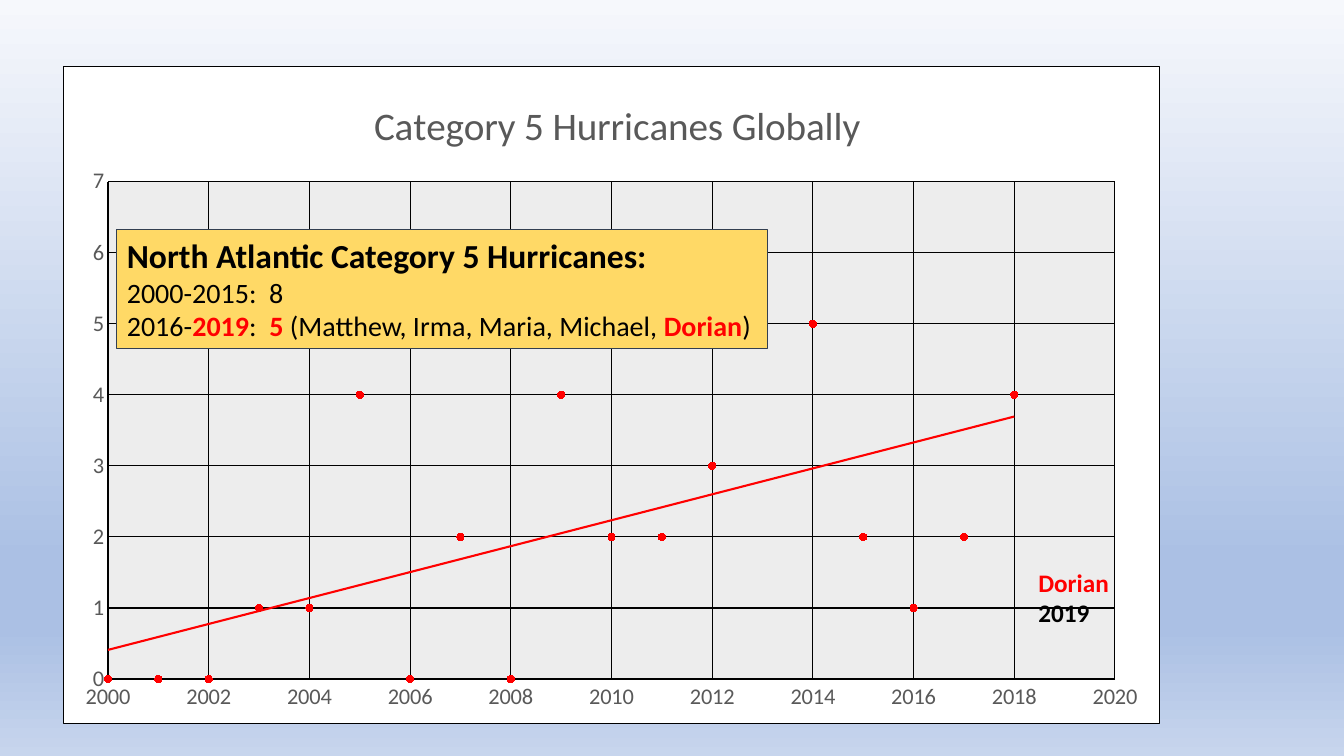
from dataclasses import dataclass

from lxml import etree
from pptx import Presentation
from pptx.chart.data import XyChartData
from pptx.dml.color import RGBColor
from pptx.enum.chart import XL_CHART_TYPE, XL_MARKER_STYLE, XL_TICK_MARK
from pptx.enum.shapes import MSO_SHAPE
from pptx.enum.text import MSO_ANCHOR, PP_ALIGN
from pptx.oxml import parse_xml
from pptx.oxml.ns import nsdecls, qn
from pptx.util import Inches, Pt

SCATTER = XL_CHART_TYPE.XY_SCATTER
CIRCLE = XL_MARKER_STYLE.CIRCLE
NO_TICK = XL_TICK_MARK.NONE
RECTANGLE = MSO_SHAPE.RECTANGLE
LEFT = PP_ALIGN.LEFT
TOP = MSO_ANCHOR.TOP


@dataclass(frozen=True)
class Theme:
    font: str = "Calibri"
    black: str = "000000"
    red: str = "FF0000"
    grey: str = "595959"
    white: str = "FFFFFF"
    plot: str = "EDEDED"
    callout: str = "FFD966"
    callout_line: str = "333F50"
    sky: tuple = ((0, "F6F8FC"), (74, "ABC0E4"), (83, "ABC0E4"), (100, "C7D5ED"))
    title_size: int = 28
    heading_size: int = 24
    body_size: int = 20
    label_size: int = 18
    axis_size: int = 16


THEME = Theme()
FIRST_YEAR = 2000
STORMS = (0, 0, 0, 1, 1, 4, 0, 2, 0, 4, 2, 2, 3, 6, 5, 2, 1, 2, 4)


def rgb(code):
    return RGBColor.from_string(code)


def style_font(font, size, color, bold=False):
    font.name = THEME.font
    font.size = Pt(size)
    font.bold = bold
    font.color.rgb = rgb(color)


def style_line(line, color, width):
    line.color.rgb = rgb(color)
    line.width = Pt(width)


def paint_background(page):
    fill = page.background.fill
    fill.gradient()
    fill.gradient_angle = 270
    stops = page.element.find(".//" + qn("a:gsLst"))
    for stop in list(stops):
        stops.remove(stop)
    for position, color in THEME.sky:
        stop = etree.SubElement(stops, qn("a:gs"), pos=str(position * 1000))
        etree.SubElement(stop, qn("a:srgbClr"), val=color)


def area_properties(color, border=None):
    """Chart-space or plot-area fill, with an optional border colour."""
    edge = f'<a:solidFill><a:srgbClr val="{border}"/></a:solidFill>' if border else "<a:noFill/>"
    return parse_xml(
        f'<c:spPr {nsdecls("c", "a")}><a:solidFill><a:srgbClr val="{color}"/></a:solidFill>'
        f'<a:ln w="{Pt(0.75)}">{edge}</a:ln></c:spPr>')


def manual_layout(target=None, **fractions):
    """Layout placed by fractions of the chart's width and height."""
    inner = f'<c:layoutTarget val="{target}"/>' if target else ""
    inner += '<c:xMode val="edge"/><c:yMode val="edge"/>'
    inner += "".join(f'<c:{key} val="{value}"/>' for key, value in fractions.items())
    return parse_xml(
        f'<c:layout {nsdecls("c")}><c:manualLayout>{inner}</c:manualLayout></c:layout>')


def set_layout(parent, layout, index):
    old = parent.find(qn("c:layout"))
    if old is not None:
        parent.remove(old)
    parent.insert(index, layout)


def style_axis(axis, low, high, step, width):
    axis.minimum_scale, axis.maximum_scale, axis.major_unit = low, high, step
    axis.major_tick_mark = axis.minor_tick_mark = NO_TICK
    axis.has_major_gridlines = True
    style_line(axis.major_gridlines.format.line, THEME.black, 0.75)
    style_line(axis.format.line, THEME.black, width)
    style_font(axis.tick_labels.font, THEME.axis_size, THEME.grey)
    axis.tick_labels.number_format = "General"
    axis.tick_labels.number_format_is_linked = False


def style_series(series):
    series.format.line.fill.background()
    series.marker.style = CIRCLE
    series.marker.size = 5
    series.marker.format.fill.solid()
    series.marker.format.fill.fore_color.rgb = rgb(THEME.red)
    style_line(series.marker.format.line, THEME.red, 0.75)
    trend = parse_xml(
        f'<c:trendline {nsdecls("c", "a")}><c:spPr><a:ln w="{Pt(1.5)}"><a:solidFill>'
        f'<a:srgbClr val="{THEME.red}"/></a:solidFill></a:ln></c:spPr>'
        '<c:trendlineType val="linear"/><c:dispRSqr val="0"/><c:dispEq val="0"/></c:trendline>')
    series._element.find(qn("c:xVal")).addprevious(trend)


def add_storm_chart(page):
    data = XyChartData()
    points = data.add_series("Series 1")
    for year, count in enumerate(STORMS, FIRST_YEAR):
        points.add_data_point(year, count)
    frame = page.shapes.add_chart(
        SCATTER, Inches(0.62), Inches(0.65), Inches(10.89), Inches(6.53), data)
    chart = frame.chart
    chart.has_legend = False
    style_font(chart.font, 10, THEME.black)

    chart.has_title = True
    run = chart.chart_title.text_frame.paragraphs[0].add_run()
    run.text = "Category 5 Hurricanes Globally"
    style_font(run.font, THEME.title_size, THEME.grey)
    chart.chart_title.include_in_layout = False
    set_layout(chart.chart_title._element, manual_layout(x=0.277, y=0.04), 1)

    style_axis(chart.category_axis, FIRST_YEAR, 2020, 2, 1.25)
    style_axis(chart.value_axis, 0, 7, 1, 0.75)
    plot = chart.plots[0]
    plot.vary_by_categories = False
    style_series(plot.series[0])

    root = chart._chartSpace
    plot_area = root.find(".//" + qn("c:plotArea"))
    set_layout(plot_area, manual_layout("inner", x=0.041, y=0.176, w=0.918, h=0.757), 0)
    plot_area.append(area_properties(THEME.plot))
    root.find(qn("c:chart")).addnext(area_properties(THEME.white, THEME.black))


def write_lines(shape, lines):
    """Each line is a size and its spans of (text, colour, bold)."""
    frame = shape.text_frame
    frame.word_wrap = True
    frame.vertical_anchor = TOP
    for index, (size, spans) in enumerate(lines):
        para = frame.add_paragraph() if index else frame.paragraphs[0]
        para.alignment = LEFT
        for text, color, bold in spans:
            span = para.add_run()
            span.text = text
            style_font(span.font, size, color, bold)


def add_callout(page, lines):
    box = page.shapes.add_shape(
        RECTANGLE, Inches(1.16), Inches(2.28), Inches(6.45), Inches(1.18))
    box.shadow.inherit = False
    box.fill.solid()
    box.fill.fore_color.rgb = rgb(THEME.callout)
    style_line(box.line, THEME.callout_line, 0.75)
    write_lines(box, lines)


def add_label(page, lines):
    box = page.shapes.add_textbox(Inches(10.2), Inches(5.58), Inches(1.63), Inches(0.71))
    write_lines(box, lines)


def main():
    deck = Presentation()
    deck.slide_width, deck.slide_height = Inches(13.33), Inches(7.5)
    page = deck.slides.add_slide(deck.slide_layouts[6])
    paint_background(page)
    add_storm_chart(page)
    black, red = THEME.black, THEME.red
    add_callout(page, (
        (THEME.heading_size, (("North Atlantic Category 5 Hurricanes:", black, True),)),
        (THEME.body_size, (("2000-2015:  8", black, False),)),
        (THEME.body_size, (
            ("2016-", black, False), ("2019", red, True), (":  ", black, False),
            ("5", red, True), (" (Matthew, Irma, Maria, Michael, ", black, False),
            ("Dorian", red, True), (")", black, False))),
    ))
    add_label(page, (
        (THEME.label_size, (("Dorian", red, True),)),
        (THEME.label_size, (("2019", black, True),)),
    ))
    deck.save("out.pptx")


if __name__ == "__main__":
    main()
